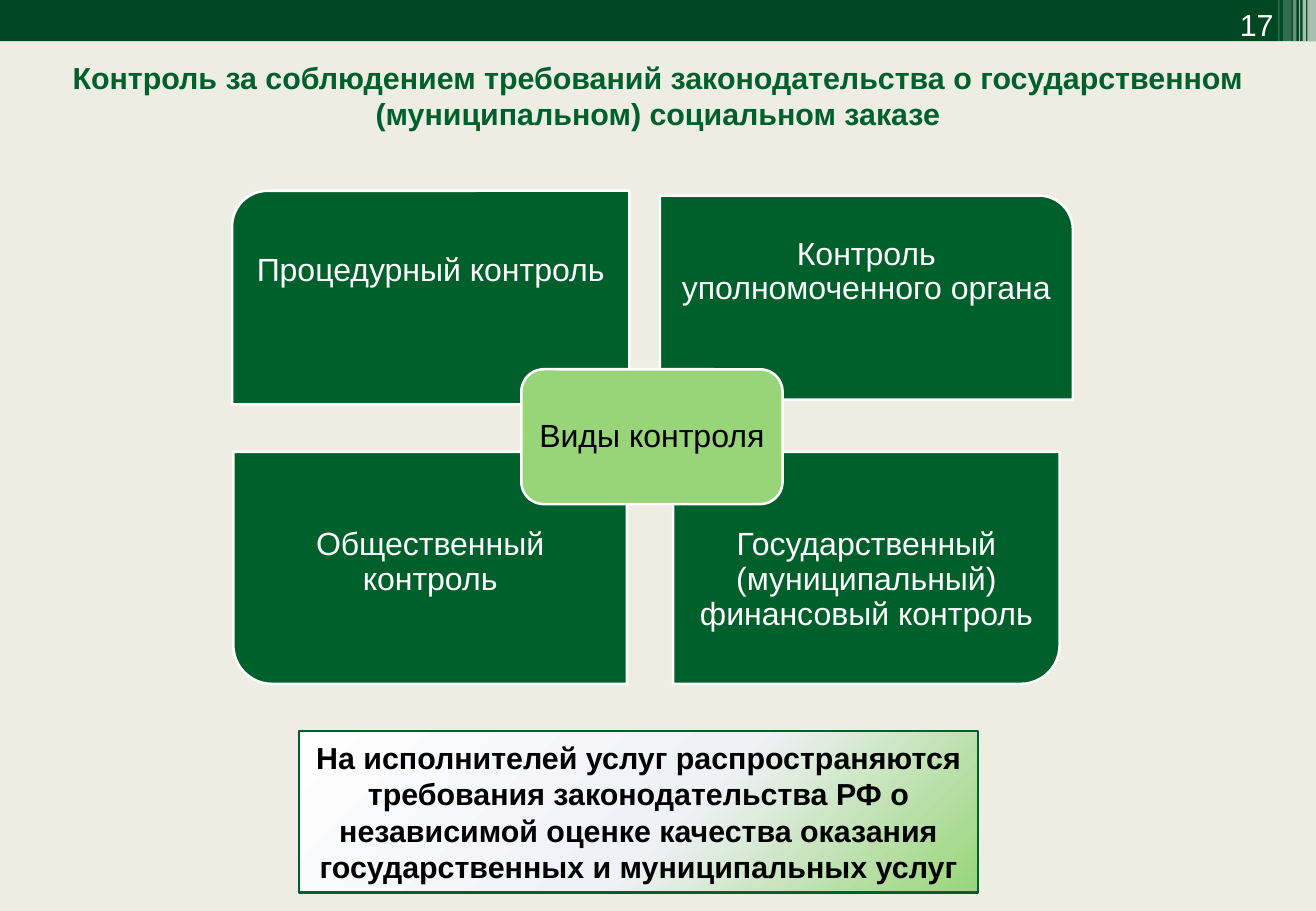
from lxml import etree
from pptx import Presentation
from pptx.dml.color import RGBColor
from pptx.enum.shapes import MSO_SHAPE as Preset
from pptx.enum.text import MSO_ANCHOR as Anchor, MSO_AUTO_SIZE as AutoSize, PP_ALIGN as Align
from pptx.oxml.ns import qn
from pptx.util import Inches, Pt

WHITE, BLACK = "FFFFFF", "000000"
DEEP, GREEN, LIGHT, PAPER = "004821", "00602B", "98D579", "EDEDE3"
TITLE_ONLY = 5


def colour(hex_code):
    return RGBColor.from_string(hex_code)


def apply(target, formats):
    for name, value in formats.items():
        setattr(target, name, value)


class ControlSlide:
    font = "Arial"
    rule = Pt(1.5)

    def __init__(self, deck):
        self.slide = deck.slides.add_slide(deck.slide_layouts[TITLE_ONLY])
        background = self.slide.background.fill
        background.solid()
        background.fore_color.rgb = colour(PAPER)

    def wording(self, holder, text, size=18, ink=BLACK, bold=False, align=Align.CENTER,
                anchor=Anchor.MIDDLE, inset=None, diagram=False):
        frame = holder.text_frame
        apply(frame, {"word_wrap": True, "auto_size": AutoSize.NONE, "vertical_anchor": anchor})
        if inset is not None:
            sides = ("left", "top", "right", "bottom")
            apply(frame, {f"margin_{side}": Inches(inset) for side in sides})
        paragraph = frame.paragraphs[0]
        paragraph.alignment = align
        if diagram:
            apply(paragraph, {"line_spacing": 0.9, "space_after": Pt(size * 0.35)})
        run = paragraph.add_run()
        run.text = text
        apply(run.font, {"name": self.font, "size": Pt(size), "bold": bold})
        run.font.color.rgb = colour(ink)

    def title(self, box, text):
        heading = self.slide.shapes.title
        apply(heading, dict(zip(("left", "top", "width", "height"), map(Inches, box))))
        self.wording(heading, text, ink=GREEN, bold=True)

    def label(self, box, text, **style):
        self.wording(self.slide.shapes.add_textbox(*map(Inches, box)), text, **style)

    def block(self, preset, box, fill, line=None, alpha=None):
        block = self.slide.shapes.add_shape(preset, *map(Inches, box))
        block.shadow.inherit = False
        block.fill.solid()
        block.fill.fore_color.rgb = colour(fill)
        if line:
            block.line.color.rgb = colour(line)
            block.line.width = self.rule
        else:
            block.line.fill.background()
        if alpha:
            tint = block.element.spPr.find(qn("a:solidFill"))[0]
            etree.SubElement(tint, qn("a:alpha"), val=str(alpha * 1000))
        return block

    def panel(self, box, turn, text):
        left, top, width, height = box
        turned = turn % 180 == 90
        across, down = (height, width) if turned else (width, height)
        corner = (left + (width - across) / 2, top + (height - down) / 2)
        self.block(Preset.ROUND_1_RECTANGLE, (*corner, across, down), GREEN, WHITE).rotation = turn
        lower = turn in (90, 180)
        text_top = top + height / 4 if lower else top
        self.label((left, text_top, width, height * 0.75), text, size=19, ink=WHITE, inset=0.15,
                   anchor=Anchor.TOP if lower else Anchor.MIDDLE, diagram=True)

    def glow(self, block, stops, focus):
        properties = block.element.spPr
        gradient = etree.Element(qn("a:gradFill"), rotWithShape="1")
        stop_list = etree.SubElement(gradient, qn("a:gsLst"))
        for percent, tint in stops:
            stop = etree.SubElement(stop_list, qn("a:gs"), pos=str(percent * 1000))
            etree.SubElement(stop, qn("a:srgbClr"), val=tint)
        circle = etree.SubElement(gradient, qn("a:path"), {"path": "circle"})
        edges = {side: str(percent * 1000) for side, percent in zip("ltrb", focus)}
        etree.SubElement(circle, qn("a:fillToRect"), edges)
        properties.replace(properties.find(qn("a:solidFill")), gradient)


def main():
    deck = Presentation()
    apply(deck, {"slide_width": Inches(10.83), "slide_height": Inches(7.5)})
    control = ControlSlide(deck)

    control.block(Preset.RECTANGLE, (0, 0, 10.83, 0.34), DEEP)
    stripes = [(10.76, 0.07, 0.34, 65), (10.72, 0.03, 0.34, 65), (10.69, 0.01, 0.34, 60),
               (10.64, 0.03, 0.34, 40), (10.56, 0.07, 0.36, 20), (10.52, 0.01, 0.36, 30)]
    for left, width, height, alpha in stripes:
        control.block(Preset.RECTANGLE, (left, 0, width, height), WHITE, alpha=alpha)
    control.label((9.68, 0, 0.9, 0.4), "17", ink=WHITE, align=Align.RIGHT, anchor=Anchor.BOTTOM)
    control.title((0, 0.4, 10.83, 0.77),
                  "Контроль за соблюдением требований законодательства о государственном "
                  "(муниципальном) социальном заказе")

    control_kinds = [
        ((1.91, 1.57, 3.27, 1.76), 270, "Процедурный контроль"),
        ((5.43, 1.61, 3.4, 1.68), 0, "Контроль уполномоченного органа"),
        ((1.92, 3.72, 3.24, 1.91), 180, "Общественный контроль"),
        ((5.54, 3.72, 3.18, 1.91), 90, "Государственный (муниципальный) финансовый контроль"),
    ]
    for box, turn, kind in control_kinds:
        control.panel(box, turn, kind)

    centre = control.block(Preset.ROUNDED_RECTANGLE, (4.29, 3.04, 2.15, 1.11), LIGHT, WHITE)
    control.wording(centre, "Виды контроля", size=19, inset=0.08, diagram=True)

    requirement = control.block(Preset.RECTANGLE, (2.46, 6.02, 5.59, 1.33), LIGHT, GREEN)
    control.glow(requirement, [(0, "FEFEFE"), (55, "F0F1F7"), (100, LIGHT)], (-40, -90, 140, 190))
    control.wording(requirement,
                    "На исполнителей услуг распространяются требования законодательства РФ "
                    "о независимой оценке качества оказания государственных и муниципальных услуг",
                    bold=True)

    deck.save("out.pptx")


if __name__ == "__main__":
    main()
